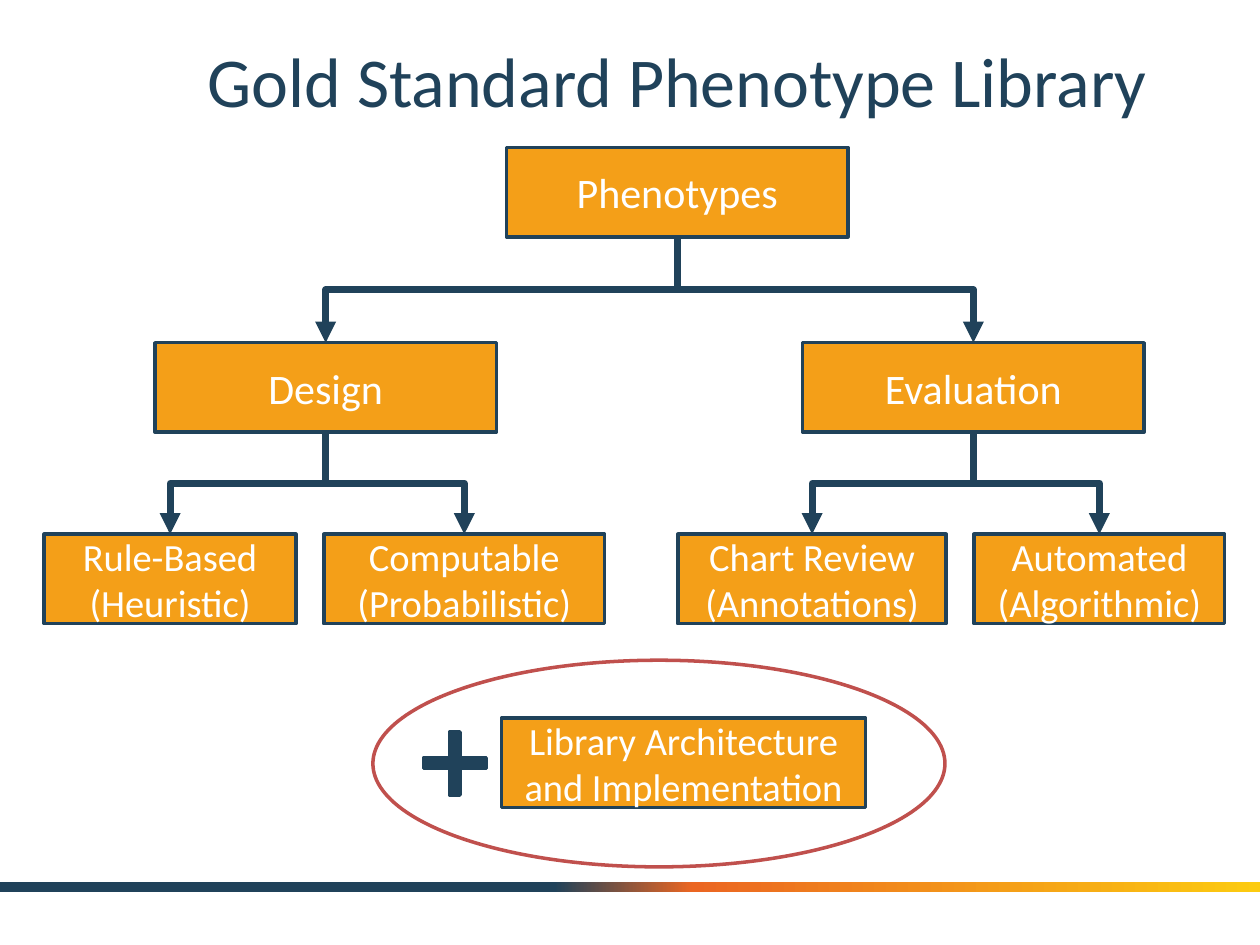
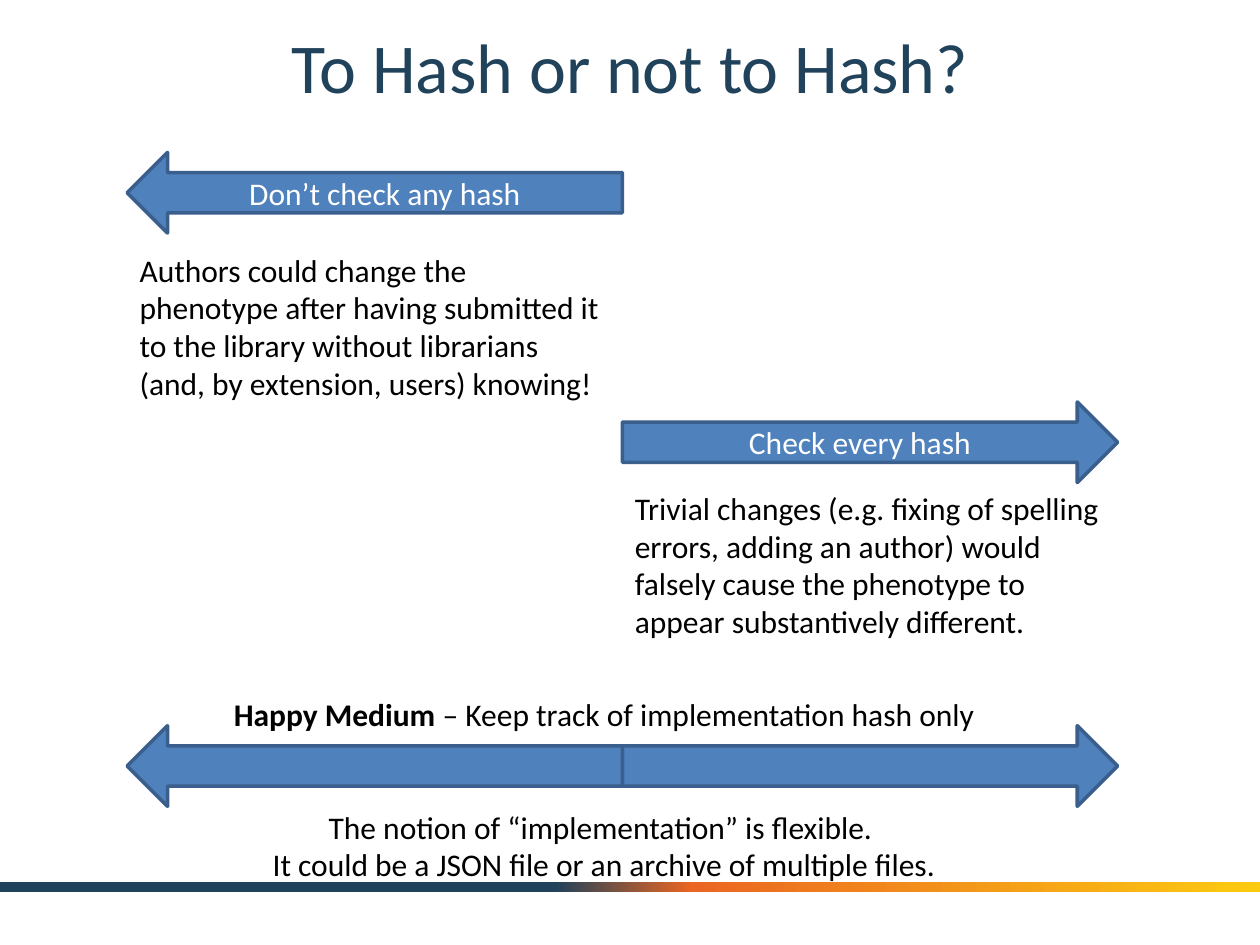
"""Build two slides on a phenotype library and hash checks."""
from copy import deepcopy

from lxml.etree import SubElement
from pptx import Presentation
from pptx.dml.color import RGBColor as RGB
from pptx.enum.shapes import MSO_CONNECTOR as LINK, MSO_SHAPE as FORM
from pptx.enum.text import MSO_ANCHOR as ANCHOR, PP_ALIGN as ALIGN
from pptx.oxml.ns import qn
from pptx.util import Inches, Pt

HUES = {
    "navy": "20425A", "gold": "F49F18", "rust": "EB6622", "sun": "FCCB10",
    "red": "C0504D", "blue": "4F81BD", "edge": "3A5F8C",
    "white": "FFFFFF", "black": "000000",
}
FONT = "Calibri"


def hue(name):
    """Return the named colour."""
    return RGB.from_string(HUES[name])


class Deck:
    """Hold the style and the current slide."""

    def __init__(self):
        """Start an empty deck."""
        self.prs = Presentation()
        self.prs.slide_width, self.prs.slide_height = Inches(10), Inches(7.5)

    def page(self, title, left, top, width):
        """Add a slide with its band and title."""
        self.slide = self.prs.slides.add_slide(self.prs.slide_layouts[6])
        self.band()
        self.text([title], left, top, width, 0.92, 40, "navy",
                  ALIGN.CENTER, ANCHOR.MIDDLE)

    def band(self):
        """Draw the gradient band near the foot."""
        band = self.shape(FORM.RECTANGLE, 0, 7, 10, 0.08, None, None)
        band.fill.gradient()
        band.fill.gradient_angle = 0
        stops = band.element.spPr.find(qn("a:gradFill")).find(qn("a:gsLst"))
        stops.append(deepcopy(stops[-1]))
        marks = ((0.44, "navy"), (0.55, "rust"), (1, "sun"))
        for stop, (place, name) in zip(band.fill.gradient_stops, marks):
            stop.position = place
            stop.color.rgb = hue(name)

    def style(self, para, size, name, align):
        """Set the font and alignment of a paragraph."""
        para.alignment = align
        para.font.name, para.font.size = FONT, Pt(size)
        para.font.color.rgb = hue(name)

    def text(self, lines, left, top, width, height, size=18, name="black",
             align=ALIGN.LEFT, anchor=ANCHOR.TOP, lead=None):
        """Add a text box, with an optional bold lead."""
        box = self.slide.shapes.add_textbox(
            Inches(left), Inches(top), Inches(width), Inches(height))
        frame = box.text_frame
        frame.word_wrap, frame.vertical_anchor = True, anchor
        for i, line in enumerate(lines):
            para = frame.add_paragraph() if i else frame.paragraphs[0]
            self.style(para, size, name, align)
            if lead and not i:
                run = para.add_run()
                run.text, run.font.bold = lead, True
            para.add_run().text = line

    def shape(self, form, left, top, width, height, fill, edge,
              label=None, size=18):
        """Add a preset shape with an optional label."""
        shape = self.slide.shapes.add_shape(
            form, Inches(left), Inches(top), Inches(width), Inches(height))
        shape.shadow.inherit = False
        if fill:
            shape.fill.solid()
            shape.fill.fore_color.rgb = hue(fill)
        else:
            shape.fill.background()
        if edge:
            shape.line.color.rgb = hue(edge)
            shape.line.width = Pt(2)
        else:
            shape.line.fill.background()
        if label:
            frame = shape.text_frame
            frame.word_wrap, frame.vertical_anchor = True, ANCHOR.MIDDLE
            para = frame.paragraphs[0]
            para.text = label
            self.style(para, size, "white", ALIGN.CENTER)
        return shape

    def node(self, label, left, top, width=2.71, size=24):
        """Add a box of the tree."""
        return self.shape(FORM.RECTANGLE, left, top, width, 0.71,
                          "gold", "navy", label, size)

    def link(self, start, end):
        """Join two boxes, bottom to top, by a bent arrow."""
        line = self.slide.shapes.add_connector(LINK.ELBOW, 0, 0, 0, 0)
        line.begin_connect(start, 2)
        line.end_connect(end, 0)
        x, y = start.left + start.width // 2, start.top + start.height
        dx, dy = end.left + end.width // 2 - x, end.top - y
        line.width, line.height = dy, abs(dx)
        line.left = x + (dx - dy) // 2
        line.top = y + (dy - abs(dx)) // 2
        props = line.element.spPr
        frame = props.find(qn("a:xfrm"))
        frame.set("rot", str((90 if dx < 0 else 270) * 60000))
        frame.set("flipH", "0" if dx < 0 else "1")
        frame.set("flipV", "0")
        line.line.color.rgb = hue("navy")
        line.line.width = Pt(4)
        SubElement(props.find(qn("a:ln")), qn("a:tailEnd"), type="triangle")
        SubElement(props, qn("a:effectLst"))

    def arrow(self, form, left, top, label=None):
        """Add a block arrow."""
        self.shape(form, left, top, 3.93, 0.64, "blue", "edge", label)


def tree(deck):
    """Draw the library tree."""
    deck.page("Gold Standard Phenotype Library", 1.25, 0.17, 8.25)
    root = deck.node("Phenotypes", 4.02, 1.17)
    limbs = (
        ("Design", 1.23, (("Rule-Based\n(Heuristic)", 0.35, 2),
                          ("Computable\n(Probabilistic)", 2.57, 2.23))),
        ("Evaluation", 6.37, (("Chart Review\n(Annotations)", 5.38, 2.13),
                              ("Automated\n(Algorithmic)", 7.73, 1.99))),
    )
    for label, left, leaves in limbs:
        limb = deck.node(label, left, 2.72)
        deck.link(root, limb)
        for name, side, width in leaves:
            deck.link(limb, deck.node(name, side, 4.24, width, 22))
    deck.node("Library Architecture and Implementation", 3.98, 5.7, 2.89, 22)
    plus = deck.shape(FORM.CROSS, 3.36, 5.81, 0.5, 0.5, "navy", "navy")
    plus.adjustments[0] = 0.417
    deck.shape(FORM.OVAL, 2.96, 5.24, 4.54, 1.64, None, "red")


def hashes(deck):
    """Draw the choices for hash checks."""
    west, mid, span = 1.01, 4.94, 3.93
    deck.page("To Hash or not to Hash?", 0, 0.06, 10)
    deck.arrow(FORM.RIGHT_ARROW, mid, 5.76)
    deck.arrow(FORM.LEFT_ARROW, west, 5.76)
    deck.text(["– Keep track of implementation hash only"],
              1.61, 5.47, 6.37, 0.4, align=ALIGN.CENTER, lead="Happy Medium ")
    deck.arrow(FORM.RIGHT_ARROW, mid, 3.19, "Check every hash")
    deck.text(["Trivial changes (e.g. fixing of spelling errors, adding an "
               "author) would falsely cause the phenotype to appear "
               "substantively different."], mid, 3.83, span, 1.31)
    deck.arrow(FORM.LEFT_ARROW, west, 1.21, "Don’t check any hash")
    deck.text(["Authors could change the phenotype after having submitted it "
               "to the library without librarians (and, by extension, users) "
               "knowing!"], west, 1.94, span, 1.31)
    deck.text(["The notion of “implementation” is flexible. ",
               "It could be a JSON file or an archive of multiple files."],
              1.61, 6.36, 6.37, 0.71, align=ALIGN.CENTER)


def main():
    """Build and save the deck."""
    deck = Deck()
    tree(deck)
    hashes(deck)
    deck.prs.save("out.pptx")


if __name__ == "__main__":
    main()
